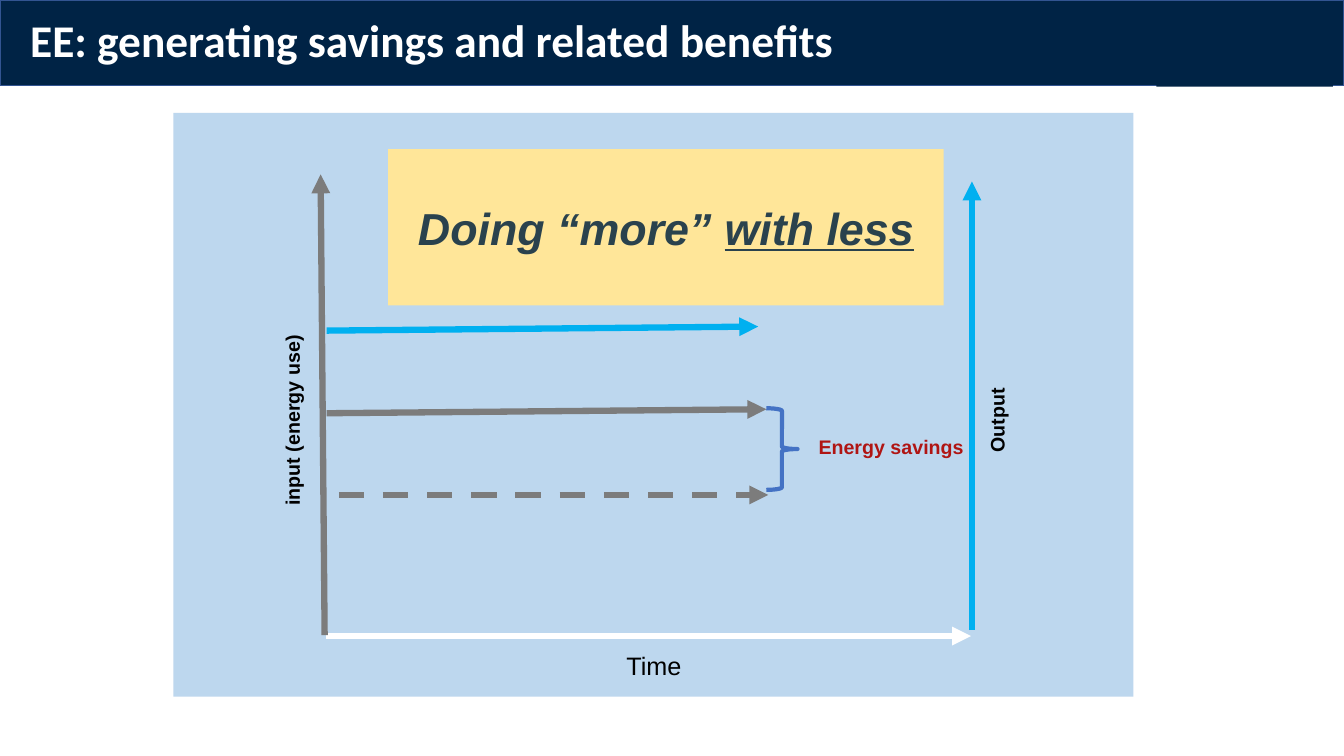
from lxml import etree
from pptx import Presentation
from pptx.dml.color import RGBColor
from pptx.enum import dml, shapes, text
from pptx.oxml import ns
from pptx.util import Inches, Pt

NAVY = RGBColor(0x00, 0x23, 0x45)
EDGE = RGBColor(0x32, 0x54, 0x91)
PALE = RGBColor(0xBD, 0xD7, 0xEE)
GOLD = RGBColor(0xFF, 0xE6, 0x99)
GRAY = RGBColor(0x7C, 0x7C, 0x7C)
CYAN = RGBColor(0x00, 0xB0, 0xF0)
BLUE = RGBColor(0x44, 0x72, 0xC4)
RED = RGBColor(0xB0, 0x15, 0x13)
SLATE = RGBColor(0x2A, 0x42, 0x4D)
WHITE = RGBColor(0xFF, 0xFF, 0xFF)
BLACK = RGBColor(0x00, 0x00, 0x00)
WIDE, HIGH = 13.33, 7.5
KIND = shapes.MSO_SHAPE


def add_form(slide, box, fill=None, line=None, width=1, kind=KIND.RECTANGLE):
    form = slide.shapes.add_shape(kind, *map(Inches, box))
    form.shadow.inherit = False
    if fill is None:
        form.fill.background()
    else:
        form.fill.solid()
        form.fill.fore_color.rgb = fill
    if line is None:
        form.line.fill.background()
    else:
        form.line.color.rgb = line
        form.line.width = Pt(width)
    return form


def add_text(slide, box, words, size=14, color=BLACK, font="Arial", bold=True,
             italic=False, under="", center=True, middle=False, turn=0,
             left=0.1, space=1.0):
    """Add a text box; the words in `under` follow underlined."""
    label = slide.shapes.add_textbox(*map(Inches, box))
    label.rotation = turn
    frame = label.text_frame
    frame.word_wrap = True
    frame.margin_left = Inches(left)
    if middle:
        frame.vertical_anchor = text.MSO_ANCHOR.MIDDLE
    para = frame.paragraphs[0]
    para.alignment = text.PP_ALIGN.CENTER if center else text.PP_ALIGN.LEFT
    para.line_spacing = space
    for part, mark in ((words, None), (under, True)):
        if part:
            run = para.add_run()
            run.text = part
            face = run.font
            face.name, face.size = font, Pt(size)
            face.bold, face.italic, face.underline = bold, italic, mark
            face.color.rgb = color


def add_arrow(slide, start, end, color, dash=False):
    arrow = slide.shapes.add_connector(
        shapes.MSO_CONNECTOR.STRAIGHT, *map(Inches, start + end))
    arrow.line.color.rgb = color
    arrow.line.width = Pt(4.5)
    if dash:
        arrow.line.dash_style = dml.MSO_LINE.DASH
    # Arrowhead, and no theme shadow
    etree.SubElement(arrow.line._get_or_add_ln(), ns.qn("a:tailEnd"),
                     type="triangle")
    etree.SubElement(arrow._element.spPr, ns.qn("a:effectLst"))


def draw_head(slide, x, y, w, h):
    add_form(slide, (x, y, w, h), NAVY, EDGE)
    add_form(slide, (x + w - 1.86, y + 0.32, 1.75, 0.54), NAVY)
    add_text(slide, (x, y, w, h), "EE: generating savings and related benefits",
             size=32.4, color=WHITE, font="Calibri", center=False,
             middle=True, left=0.3, space=0.9)


def draw_graph(slide, x, y, w, h):
    def spot(dx, dy):
        return x + dx, y + dy

    add_form(slide, (x, y, w, h), PALE)

    # Axes and trend arrows
    for start, end, color, dash in (
            ((1.51, 5.19), (7.91, 5.19), WHITE, False),
            ((1.5, 5.18), (1.46, 0.61), GRAY, False),
            ((7.92, 5.13), (7.92, 0.68), CYAN, False),
            ((1.52, 2.16), (5.8, 2.12), CYAN, False),
            ((1.52, 2.98), (5.88, 2.94), GRAY, False),
            ((1.64, 3.79), (5.9, 3.79), GRAY, True)):
        add_arrow(slide, spot(*start), spot(*end), color, dash)

    # Savings brace and its label
    add_form(slide, (*spot(5.88, 2.93), 0.31, 0.81), line=BLUE, width=3,
             kind=KIND.RIGHT_BRACE)
    add_text(slide, (*spot(6.3, 3.15), 2.2, 0.34), "Energy savings",
             color=RED, center=False)

    # Axis labels
    for dx, name in ((0.08, "input (energy use)"), (7.07, "Output")):
        add_text(slide, (*spot(dx, 2.88), 2.2, 0.34), name, turn=270)
    add_text(slide, (*spot(3.87, 5.28), 1.79, 0.4), "Time", size=18, bold=False)

    # Message banner
    sign = (*spot(2.13, 0.36), 5.51, 1.55)
    add_form(slide, sign, GOLD)
    add_text(slide, sign, "Doing “more” ", under="with less", size=32,
             color=SLATE, italic=True, middle=True)


def main():
    deck = Presentation()
    deck.slide_width, deck.slide_height = Inches(WIDE), Inches(HIGH)
    slide = deck.slides.add_slide(deck.slide_layouts[6])
    draw_head(slide, 0, 0, WIDE, 0.85)
    draw_graph(slide, 1.72, 1.12, 9.52, 5.79)
    deck.save("out.pptx")


if __name__ == "__main__":
    main()
